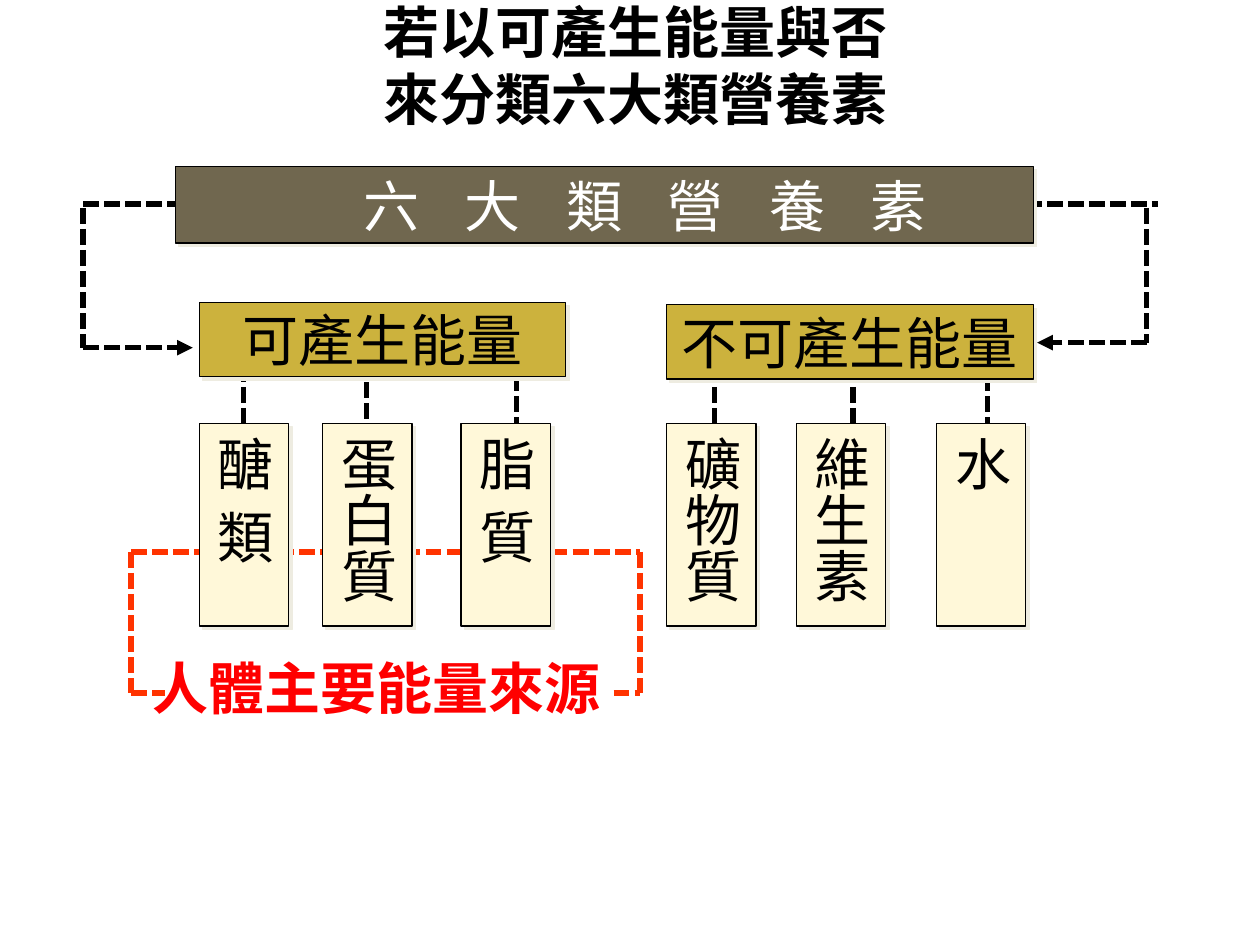
from itertools import pairwise

from lxml import etree
from pptx import Presentation
from pptx.dml.color import RGBColor
from pptx.enum.dml import MSO_LINE
from pptx.enum.shapes import MSO_CONNECTOR, MSO_SHAPE
from pptx.enum.text import MSO_ANCHOR, MSO_AUTO_SIZE, PP_ALIGN
from pptx.oxml.ns import qn
from pptx.util import Pt

STRAIGHT = MSO_CONNECTOR.STRAIGHT
RECTANGLE = MSO_SHAPE.RECTANGLE
DASH = MSO_LINE.SQUARE_DOT
MIDDLE = MSO_ANCHOR.MIDDLE
CENTER = PP_ALIGN.CENTER
NO_AUTOFIT = MSO_AUTO_SIZE.NONE

BLACK = RGBColor(0x00, 0x00, 0x00)
WHITE = RGBColor(0xFF, 0xFF, 0xFF)
RED = RGBColor(0xFF, 0x00, 0x00)
ORANGE = RGBColor(0xFF, 0x33, 0x00)
OLIVE = RGBColor(0x70, 0x67, 0x4F)
GOLD = RGBColor(0xCC, 0xB2, 0x3D)
CREAM = RGBColor(0xFF, 0xF8, 0xD9)
SHADOW = RGBColor(0xEE, 0xEC, 0xE1)

FONT = "Noto Sans CJK SC"
NUTRIENT_TOP, NUTRIENT_WIDTH, NUTRIENT_HEIGHT = 241.9, 51.1, 115.9
STALK_BOTTOM = 300


def write(paragraph, text, color=BLACK, spacing=0, **font_format):
    """Add a run in the slide's font; spacing is between letters, in points."""
    run = paragraph.add_run()
    run.text = text
    values = {"name": FONT, "size": Pt(32), **font_format}
    for name, value in values.items():
        setattr(run.font, name, value)
    run.font.color.rgb = color
    properties = run.font._element
    etree.SubElement(properties, qn("a:ea"), typeface=FONT)
    if spacing:
        properties.set("spc", str(spacing * 100))


def add_path(slide, points, color=BLACK, arrow=False):
    """Draw dashed lines from point to point, with an arrowhead at the last."""
    for start, end in pairwise(points):
        line = slide.shapes.add_connector(
            STRAIGHT, *(Pt(value) for value in (*start, *end)))
        line.line.color.rgb = color
        line.line.width = Pt(3)
        line.line.dash_style = DASH
        properties = line._element.spPr
        if arrow and end == points[-1]:
            etree.SubElement(properties.find(qn("a:ln")), qn("a:tailEnd"),
                             type="triangle")
        etree.SubElement(properties, qn("a:effectLst"))


def add_box(slide, box, text, fill, color=BLACK, spacing=0, inset=7.2):
    shape = slide.shapes.add_shape(RECTANGLE, *(Pt(value) for value in box))
    shape.fill.solid()
    shape.fill.fore_color.rgb = fill
    shape.line.color.rgb = BLACK
    shape.line.width = Pt(0.75)
    shape.shadow.inherit = False
    effects = shape._element.spPr.find(qn("a:effectLst"))
    shadow = etree.SubElement(effects, qn("a:outerShdw"), dist=str(Pt(2.8)),
                              dir=str(45 * 60000), algn="ctr", rotWithShape="0")
    etree.SubElement(shadow, qn("a:srgbClr"), val=str(SHADOW))
    frame = shape.text_frame
    frame.word_wrap = False
    frame.vertical_anchor = MIDDLE
    frame.margin_left = Pt(inset)
    frame.paragraphs[0].alignment = CENTER
    write(frame.paragraphs[0], text, color, spacing)
    return frame


def add_nutrient(slide, left, name):
    box = left, NUTRIENT_TOP, NUTRIENT_WIDTH, NUTRIENT_HEIGHT
    frame = add_box(slide, box, name, CREAM, spacing=0 if len(name) > 2 else 10)
    frame.paragraphs[0].line_spacing = Pt(38.4)
    frame._txBody.bodyPr.set("vert", "eaVert")


def add_branch(slide, box, heading, nutrients):
    """nutrients: name, left offset, stalk offset and stalk top of each."""
    left = box[0]
    for _, _, stalk, stalk_top in nutrients:
        add_path(slide, [(left + stalk, stalk_top), (left + stalk, STALK_BOTTOM)])
    add_box(slide, box, heading, GOLD)
    for name, offset, _, _ in nutrients:
        add_nutrient(slide, left + offset, name)


def add_energy_source(slide, box, text):
    """Frame the energy nutrients with an open bracket above its caption."""
    left, top, width, height = box
    right, bottom = left + width, top + height
    add_path(slide, [(left, top), (right, top), (right, bottom)], ORANGE)
    add_path(slide, [(left, top), (left, bottom), (left + 19.4, bottom)], ORANGE)
    add_path(slide, [(right - 15.1, bottom), (right, bottom)], ORANGE)
    caption = slide.shapes.add_textbox(
        Pt(left + 5), Pt(bottom - 29.5), Pt(275), Pt(61.9))
    caption.text_frame.word_wrap = True
    paragraph = caption.text_frame.paragraphs[0]
    paragraph.line_spacing = Pt(42)
    write(paragraph, text, RED, bold=True)


def add_title(slide, box, lines):
    title = slide.shapes.title
    for name, value in zip(("left", "top", "width", "height"), box):
        setattr(title, name, Pt(value))
    frame = title.text_frame
    frame.auto_size = NO_AUTOFIT
    frame.vertical_anchor = MIDDLE
    for index, line in enumerate(lines):
        paragraph = frame.add_paragraph() if index else frame.paragraphs[0]
        paragraph.alignment = CENTER
        paragraph.line_spacing = Pt(38.4)
        write(paragraph, line, bold=True)


def main():
    presentation = Presentation()
    presentation.slide_width, presentation.slide_height = Pt(720), Pt(540)
    slide = presentation.slides.add_slide(presentation.slide_layouts[5])
    for placeholder in list(slide.placeholders):
        if placeholder != slide.shapes.title:
            placeholder._element.getparent().remove(placeholder._element)

    add_title(slide, (42.5, 15.1, 641.5, 43.9),
              ["若以可產生能量與否", "來分類六大類營養素"])
    add_path(slide, [(357.8, 116.6), (661.7, 116.6)])
    add_path(slide, [(655.2, 118.8), (655.2, 195.8), (592.6, 195.8)], arrow=True)
    add_branch(slide, (380.9, 174.2, 209.5, 42.5), "不可產生能量", [
        ("礦物質", 0, 27.3, 185), ("維生素", 74.1, 106.5, 185),
        ("水", 154.1, 183.6, 202.3)])

    add_energy_source(slide, (74.9, 315.4, 290.9, 80.6), "人體主要能量來源")
    add_path(slide, [(47.5, 116.6), (351.4, 116.6)])
    add_path(slide, [(47.5, 118.8), (47.5, 198.7), (110.2, 198.7)], arrow=True)
    add_branch(slide, (113.8, 172.8, 209.5, 42.5), "可產生能量", [
        ("醣類", 0, 25.2, 185), ("蛋白質", 70.5, 95.7, 194.4),
        ("脂質", 149.7, 181.4, 202.3)])

    add_box(slide, (100.1, 95, 490.3, 43.9), "六大類營養素", OLIVE, WHITE,
            spacing=26, inset=54)
    presentation.save("out.pptx")


if __name__ == "__main__":
    main()
